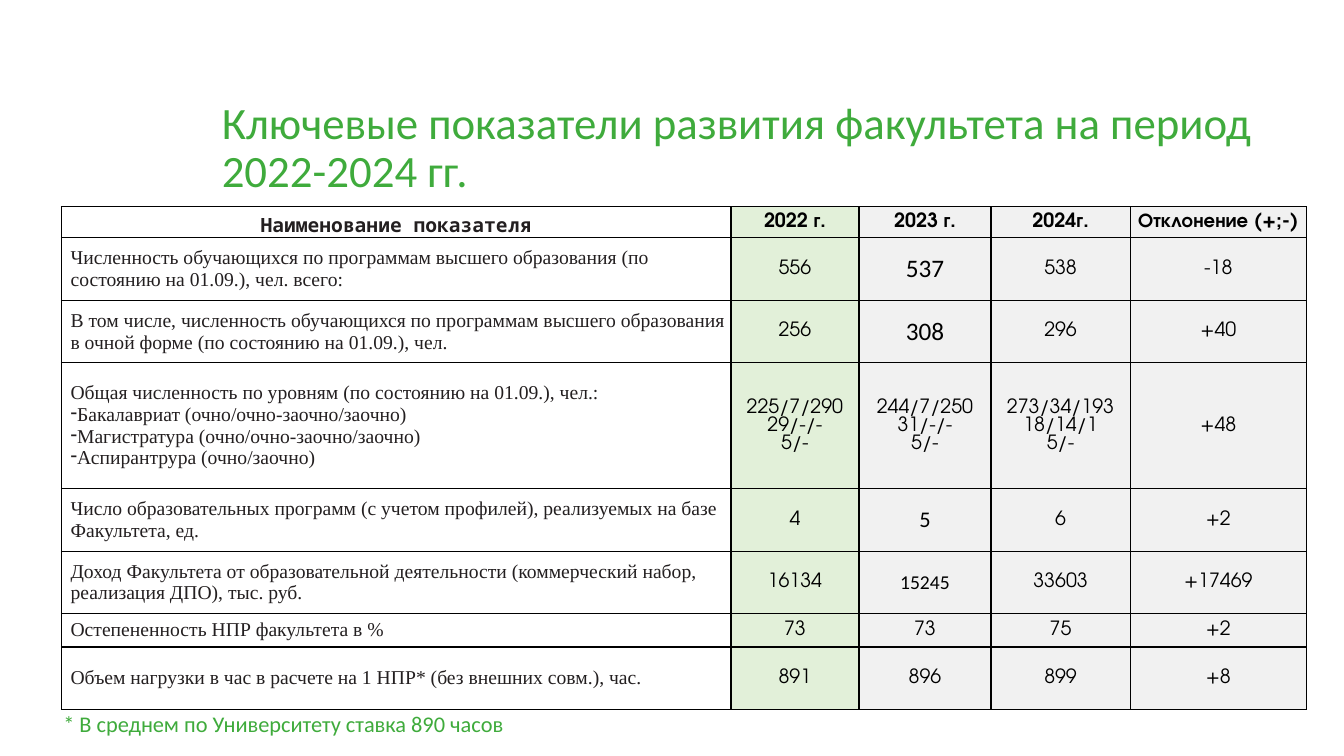
import lxml.etree
import pptx
import pptx.dml.color
import pptx.enum.text
import pptx.oxml.ns
import pptx.util

GREEN = pptx.dml.color.RGBColor(0x3F, 0xAB, 0x3C)
BLACK = pptx.dml.color.RGBColor(0x00, 0x00, 0x00)
CHARCOAL = pptx.dml.color.RGBColor(0x23, 0x1F, 0x20)
WHITE = pptx.dml.color.RGBColor(0xFF, 0xFF, 0xFF)
PALE_GREEN = pptx.dml.color.RGBColor(0xE2, 0xF0, 0xD9)
PALE_GREY = pptx.dml.color.RGBColor(0xF1, 0xF1, 0xF1)

SANS = "Calibri"
SERIF = "Times New Roman"
MONO = "Noto Sans Mono"
GEOMETRIC = "TeX Gyre Adventor"

ALIGN = pptx.enum.text.PP_ALIGN
ANCHOR = pptx.enum.text.MSO_ANCHOR

TITLE_BOX = (2.1, 0.95, 10.76, 0.45)
TABLE_BOX = (0.61, 2.05, 12.35, 4.99)
FOOTNOTE_BOX = (0.53, 7.03, 10.76, 0.45)
COLUMN_SHARES = (6.64, 1.27, 1.31, 1.38, 1.75)
ROW_SHARES = (0.31, 0.62, 0.62, 1.25, 0.62, 0.62, 0.33, 0.62)
COLUMN_FILLS = (WHITE, PALE_GREEN, PALE_GREY, PALE_GREY, PALE_GREY)

INDICATORS = [
    ["Наименование показателя", "2022 г.", "2023 г.", "2024г.", "Отклонение (+;-)"],
    ["Численность обучающихся по программам высшего образования "
     "(по состоянию на 01.09.), чел. всего:", "556", "537", "538", "-18"],
    ["В том числе, численность обучающихся по программам высшего образования "
     "в очной форме (по состоянию на 01.09.), чел.", "256", "308", "296", "+40"],
    ["Общая численность по уровням (по состоянию на 01.09.), чел.:\n"
     "Бакалавриат (очно/очно-заочно/заочно)\n"
     "Магистратура (очно/очно-заочно/заочно)\n"
     "Аспирантрура (очно/заочно)",
     "225/7/290\n29/-/-\n5/-", "244/7/250\n31/-/-\n5/-", "273/34/193\n18/14/1\n5/-", "+48"],
    ["Число образовательных программ (с учетом профилей), реализуемых на базе "
     "Факультета, ед.", "4", "5", "6", "+2"],
    ["Доход Факультета от образовательной деятельности (коммерческий набор, "
     "реализация ДПО), тыс. руб.", "16134", "15245", "33603", "+17469"],
    ["Остепененность НПР факультета в %", "73", "73", "75", "+2"],
    ["Объем нагрузки в час в расчете на 1 НПР* (без внешних совм.), час.",
     "891", "896", "899", "+8"],
]
CALIBRI_SIZES = {(1, 2): 18, (2, 2): 18, (4, 2): 16, (5, 2): 14}


def to_inches(box):
    return [pptx.util.Inches(length) for length in box]


def add_run(paragraph, text, size, font_name, color, bold=False):
    run = paragraph.add_run()
    run.text = text
    run.font.size = pptx.util.Pt(size)
    run.font.name = font_name
    run.font.color.rgb = color
    run.font.bold = bold


def fill_green_text(shape, text, size):
    frame = shape.text_frame
    frame.word_wrap = True
    frame.auto_size = pptx.enum.text.MSO_AUTO_SIZE.NONE
    frame.vertical_anchor = ANCHOR.TOP
    paragraph = frame.paragraphs[0]
    paragraph.alignment = ALIGN.LEFT
    paragraph.line_spacing = 0.9
    add_run(paragraph, text, size, SANS, GREEN)


def add_title(slide, box):
    title = slide.shapes.title
    title.left, title.top, title.width, title.height = to_inches(box)
    fill_green_text(title, "Ключевые показатели развития факультета на период 2022-2024 гг.", 32)


def add_footnote(slide, box):
    footnote = slide.shapes.add_textbox(*to_inches(box))
    fill_green_text(footnote, "* В среднем по Университету ставка 890 часов", 16)


def add_borders(cell):
    properties = cell._tc.get_or_add_tcPr()
    for side in ("a:lnL", "a:lnR", "a:lnT", "a:lnB"):
        line = lxml.etree.SubElement(
            properties, pptx.oxml.ns.qn(side), w=str(pptx.util.Pt(1)))
        solid = lxml.etree.SubElement(line, pptx.oxml.ns.qn("a:solidFill"))
        lxml.etree.SubElement(solid, pptx.oxml.ns.qn("a:srgbClr"), val=str(BLACK))


def indent_label(paragraph, bulleted):
    properties = paragraph._p.get_or_add_pPr()
    properties.set("marL", str(pptx.util.Inches(0.09)))
    properties.set("indent", "0")
    if bulleted:
        lxml.etree.SubElement(properties, pptx.oxml.ns.qn("a:buChar"), char="-")


def choose_font(row, column):
    if column == 0:
        return (14, SERIF if row else MONO, CHARCOAL)
    if (row, column) in CALIBRI_SIZES:
        return (CALIBRI_SIZES[row, column], SANS, BLACK)
    return (14, GEOMETRIC, BLACK)


def fill_cell(cell, text, row, column):
    add_borders(cell)
    cell.fill.solid()
    cell.fill.fore_color.rgb = COLUMN_FILLS[column]
    cell.margin_left = cell.margin_right = cell.margin_top = cell.margin_bottom = 0
    is_label = column == 0 and row > 0
    cell.vertical_anchor = ANCHOR.BOTTOM if row == column == 0 else ANCHOR.MIDDLE
    frame = cell.text_frame
    for index, line in enumerate(text.split("\n")):
        paragraph = frame.add_paragraph() if index else frame.paragraphs[0]
        paragraph.alignment = ALIGN.LEFT if is_label else ALIGN.CENTER
        if is_label:
            indent_label(paragraph, index > 0)
        add_run(paragraph, line, *choose_font(row, column), bold=row == 0)


def add_indicator_table(slide, box):
    left, top, width, height = to_inches(box)
    table = slide.shapes.add_table(
        len(ROW_SHARES), len(COLUMN_SHARES), left, top, width, height).table
    table.first_row = False
    table.horz_banding = False
    for column, share in zip(table.columns, COLUMN_SHARES):
        column.width = int(width * share / sum(COLUMN_SHARES))
    for row, share in zip(table.rows, ROW_SHARES):
        row.height = int(height * share / sum(ROW_SHARES))
    for row, texts in enumerate(INDICATORS):
        for column, text in enumerate(texts):
            fill_cell(table.cell(row, column), text, row, column)


def main():
    presentation = pptx.Presentation()
    presentation.slide_width = pptx.util.Inches(13.33)
    presentation.slide_height = pptx.util.Inches(7.5)
    slide = presentation.slides.add_slide(presentation.slide_layouts.get_by_name("Title Only"))
    add_indicator_table(slide, TABLE_BOX)
    add_title(slide, TITLE_BOX)
    add_footnote(slide, FOOTNOTE_BOX)
    presentation.save("out.pptx")


if __name__ == "__main__":
    main()
